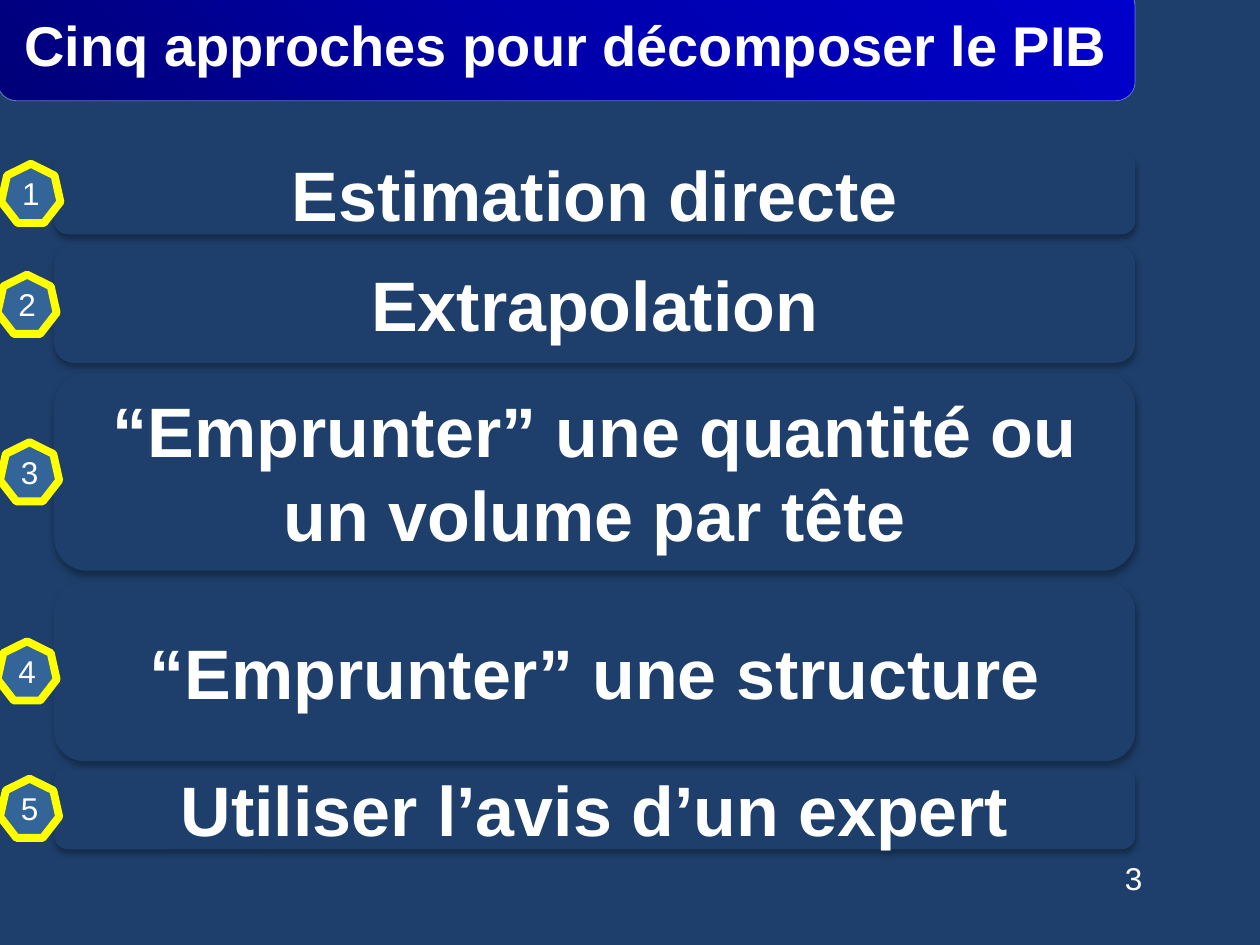
from pptx import Presentation, util as u
from pptx.dml.color import RGBColor
from pptx.enum import shapes, text
from pptx.oxml import parse_xml
from pptx.oxml.ns import nsdecls

COLORS = {
    "navy": "1E3F6C", "badge": "336599", "yellow": "FFFF00", "white": "FFFFFF",
    "edge": "6279B6", "shade": "000000",
    "deep": "000079", "middle": "0000AC", "bright": "0000CC",
}
COLUMNS, ROWS = 100, 75
APPROACHES = [
    ("Estimation directe", 12.1, 6.5, 0.1, 13),
    ("Extrapolation", 19.4, 9.4, -0.2, 21.8),
    ("“Emprunter” une quantité ou un volume par tête", 29.6, 15.7, 0, 35.1),
    ("“Emprunter” une structure", 46.2, 14.2, -0.2, 50.9),
    ("Utiliser l’avis d’un expert", 60.9, 6.5, 0, 61.8),
]


def color(name):
    return RGBColor.from_string(COLORS[name])


def write(frame, words, size=18, bold=False, align=text.PP_ALIGN.CENTER,
          anchor=text.MSO_ANCHOR.MIDDLE, wrap=True, inset=0.1):
    frame.word_wrap = wrap
    frame.vertical_anchor = anchor
    frame.margin_left = frame.margin_right = u.Inches(inset)
    frame.margin_top = frame.margin_bottom = u.Inches(inset / 2)
    line = frame.paragraphs[0]
    line.alignment = align
    run = line.add_run()
    run.text = words
    run.font.name, run.font.size, run.font.bold = "Arial", u.Pt(size), bold
    run.font.color.rgb = color("white")


class ApproachSlide:
    """Holds the slide and its style, with lengths in grid columns and rows."""

    def __init__(self, deck):
        self.slide = deck.slides.add_slide(deck.slide_layouts[6])
        self.column = deck.slide_width / COLUMNS
        self.row = deck.slide_height / ROWS
        background = self.slide.background.fill
        background.solid()
        background.fore_color.rgb = color("navy")

    def place(self, left, top, width, height):
        return (round(left * self.column), round(top * self.row),
                round(width * self.column), round(height * self.row))

    def block(self, kind, area, fill=None, edge=None, weight=0):
        block = self.slide.shapes.add_shape(kind, *self.place(*area))
        block.shadow.inherit = False
        if fill:
            block.fill.solid()
            block.fill.fore_color.rgb = color(fill)
        if edge:
            block.line.color.rgb = color(edge)
            block.line.width = u.Pt(weight)
        else:
            block.line.fill.background()
        return block

    def page_number(self, words, area):
        number = self.slide.shapes.add_textbox(*self.place(*area))
        write(number.text_frame, words, align=text.PP_ALIGN.LEFT,
              anchor=text.MSO_ANCHOR.TOP)

    def panel(self, words, top, height):
        panel = self.block(shapes.MSO_SHAPE.ROUNDED_RECTANGLE,
                           (4.3, top, 85.8, height), "navy")
        effects = panel._element.spPr.find(
            "{http://schemas.openxmlformats.org/drawingml/2006/main}effectLst")
        effects.append(parse_xml(
            f'<a:outerShdw {nsdecls("a")} blurRad="{u.Pt(3.5)}" dist="{u.Pt(2.2)}" '
            f'dir="5400000" rotWithShape="0"><a:srgbClr val="{COLORS["shade"]}">'
            '<a:alpha val="32000"/></a:srgbClr></a:outerShdw>'))
        write(panel.text_frame, words, size=40, bold=True)

    def badge(self, words, left, top):
        badge = self.block(shapes.MSO_SHAPE.HEPTAGON, (left, top, 4.7, 4.7),
                           "badge", "yellow", 4.5)
        write(badge.text_frame, words, wrap=False, inset=0)

    def title(self, words, area):
        banner = self.block(shapes.MSO_SHAPE.ROUNDED_RECTANGLE, area,
                            edge="edge", weight=0.5)
        stops = "".join(
            f'<a:gs pos="{share * 1000}"><a:srgbClr val="{COLORS[name]}"/></a:gs>'
            for share, name in ((0, "deep"), (50, "middle"), (100, "bright")))
        banner._element.spPr.prstGeom.addnext(parse_xml(
            f'<a:gradFill {nsdecls("a")} rotWithShape="1"><a:gsLst>{stops}</a:gsLst>'
            f'<a:lin ang="{315 * 60000}" scaled="0"/></a:gradFill>'))
        write(banner.text_frame, words, size=32, bold=True)


def main():
    deck = Presentation()
    deck.slide_width, deck.slide_height = u.Inches(10), u.Inches(7.5)
    page = ApproachSlide(deck)
    page.page_number("3", (88.3, 67.7, 8.3, 4))
    for approach, top, height, _, _ in reversed(APPROACHES):
        page.panel(approach, top, height)
    for rank, (_, _, _, left, top) in enumerate(APPROACHES, 1):
        page.badge(str(rank), left, top)
    page.title("Cinq approches pour décomposer le PIB", (-0.2, -1, 90.3, 9))
    deck.save("out.pptx")


if __name__ == "__main__":
    main()
